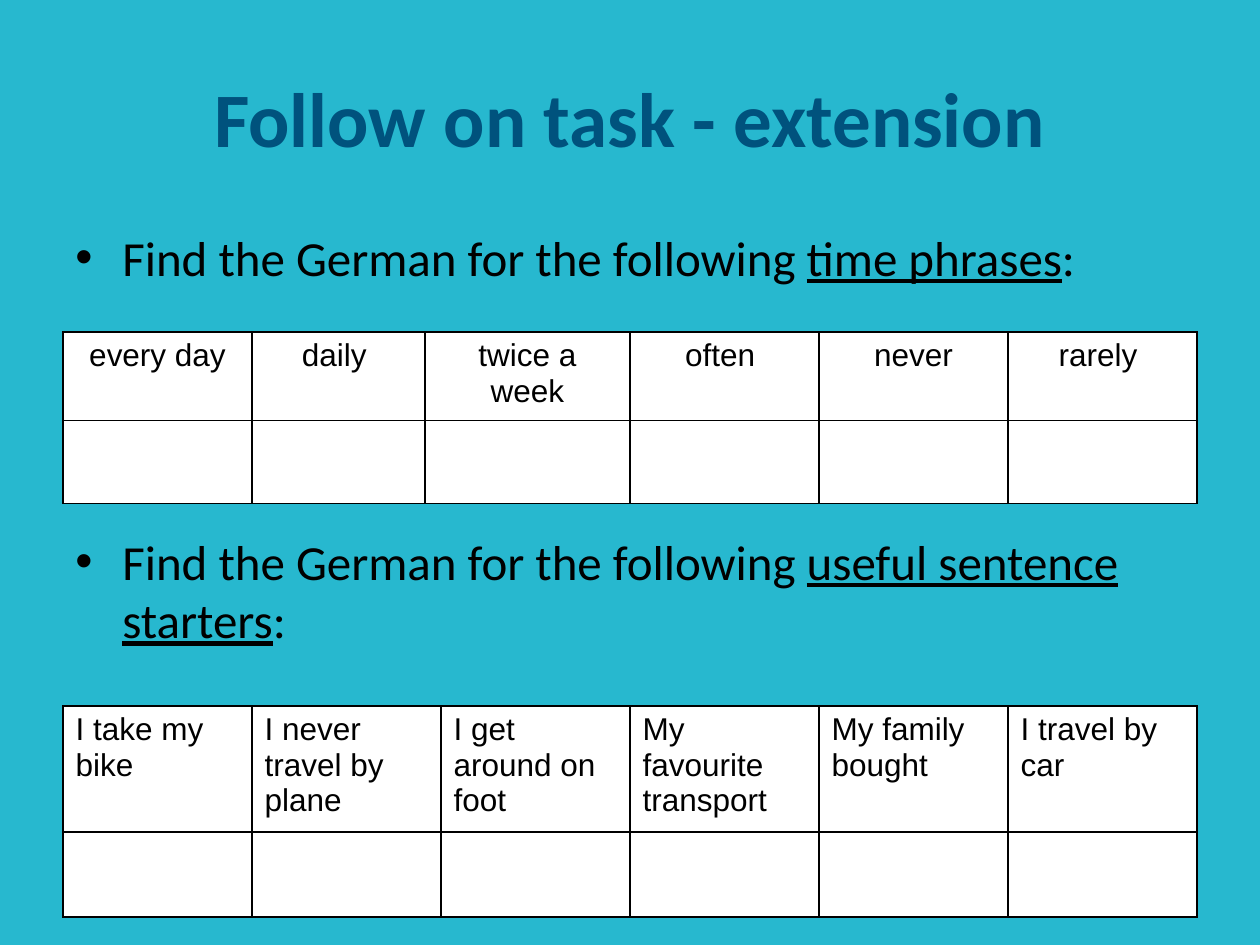
"""Build the follow-on task slide: two German phrase-finding tables with prompts."""
from dataclasses import dataclass

from lxml.etree import SubElement
from pptx import Presentation
from pptx.dml.color import RGBColor as RGB
from pptx.enum.text import MSO_ANCHOR as ANCHOR, PP_ALIGN as ALIGN
from pptx.oxml.ns import qn
from pptx.util import Emu, Pt

TITLE = "Follow on task - extension"
PROMPTS = [
    ("Find the German for the following ", "time phrases", ":"),
    ("Find the German for the following ", "useful sentence starters", ":"),
]
TABLES = [
    dict(top=332, cols=[189, 173, 205, 189, 189, 189], rows=[83, 83], align=ALIGN.CENTER,
         words=["every day", "daily ", "twice a week", "often ", "never", "rarely "]),
    dict(top=706, cols=[189] * 6, rows=[118, 85], align=ALIGN.LEFT,
         words=["I take my bike", "I never travel by plane", "I get around on foot",
                "My favourite transport", "My family bought", "I travel by car"]),
]
LEFT, WIDTH, INDENT, PROMPT_GAP = 63, 1134, 47, 140


@dataclass(frozen=True)
class Theme:
    back: str = "27B8CF"
    title: str = "00527D"
    ink: str = "000000"
    cell: str = "FFFFFF"
    heading_font: str = "Calibri"
    cell_font: str = "Arial"
    title_size: int = 44
    prompt_size: int = 28
    cell_size: int = 18
    border: int = 1


T = Theme()


def px(n):
    return Emu(round(n * 914400 / 126))


def write(p, text, *, size, font=T.heading_font, color=T.ink, bold=False, underline=False):
    r = p.add_run()
    r.text = text
    f = r.font
    f.size, f.name, f.bold, f.underline = Pt(size), font, bold, underline
    f.color.rgb = RGB.from_string(color)


def text_frame(slide, top, height, anchor):
    tf = slide.shapes.add_textbox(px(LEFT), px(top), px(WIDTH), px(height)).text_frame
    tf.word_wrap = True
    tf.vertical_anchor = anchor
    return tf


def add_bullet(p):
    ppr = p._p.get_or_add_pPr()
    ppr.set("marL", str(px(INDENT)))
    ppr.set("indent", str(-px(INDENT)))
    SubElement(ppr, qn("a:buFont"), typeface="Arial")
    SubElement(ppr, qn("a:buChar"), char="•")


def style_cell(cell):
    tcpr = cell._tc.get_or_add_tcPr()
    for side in ("lnL", "lnR", "lnT", "lnB"):
        ln = SubElement(tcpr, qn(f"a:{side}"), w=str(Pt(T.border)))
        SubElement(SubElement(ln, qn("a:solidFill")), qn("a:srgbClr"), val=T.ink)
    cell.fill.solid()
    cell.fill.fore_color.rgb = RGB.from_string(T.cell)


def add_phrase_table(slide, top, cols, rows, align, words):
    table = slide.shapes.add_table(len(rows), len(cols), px(LEFT), px(top),
                                   px(sum(cols)), px(sum(rows))).table
    table.first_row = table.horz_banding = False
    for col, width in zip(table.columns, cols):
        col.width = px(width)
    for row, height in zip(table.rows, rows):
        row.height = px(height)
    for cell in table.iter_cells():
        style_cell(cell)
    for c, word in enumerate(words):
        p = table.cell(0, c).text_frame.paragraphs[0]
        p.alignment = align
        write(p, word, size=T.cell_size, font=T.cell_font)


def main():
    prs = Presentation()
    prs.slide_width, prs.slide_height = px(1260), px(945)
    s = prs.slides.add_slide(prs.slide_layouts[6])
    s.background.fill.solid()
    s.background.fill.fore_color.rgb = RGB.from_string(T.back)

    p = text_frame(s, 38, 158, ANCHOR.MIDDLE).paragraphs[0]
    p.alignment = ALIGN.CENTER
    write(p, TITLE, size=T.title_size, color=T.title, bold=True)

    tf = text_frame(s, 221, 624, ANCHOR.TOP)
    for i, (lead, key, end) in enumerate(PROMPTS):
        p = tf.add_paragraph() if i else tf.paragraphs[0]
        add_bullet(p)
        if i:
            p.space_before = Pt(PROMPT_GAP)
        write(p, lead, size=T.prompt_size)
        write(p, key, size=T.prompt_size, underline=True)
        write(p, end, size=T.prompt_size)

    for table in TABLES:
        add_phrase_table(s, **table)
    prs.save("out.pptx")


if __name__ == "__main__":
    main()
